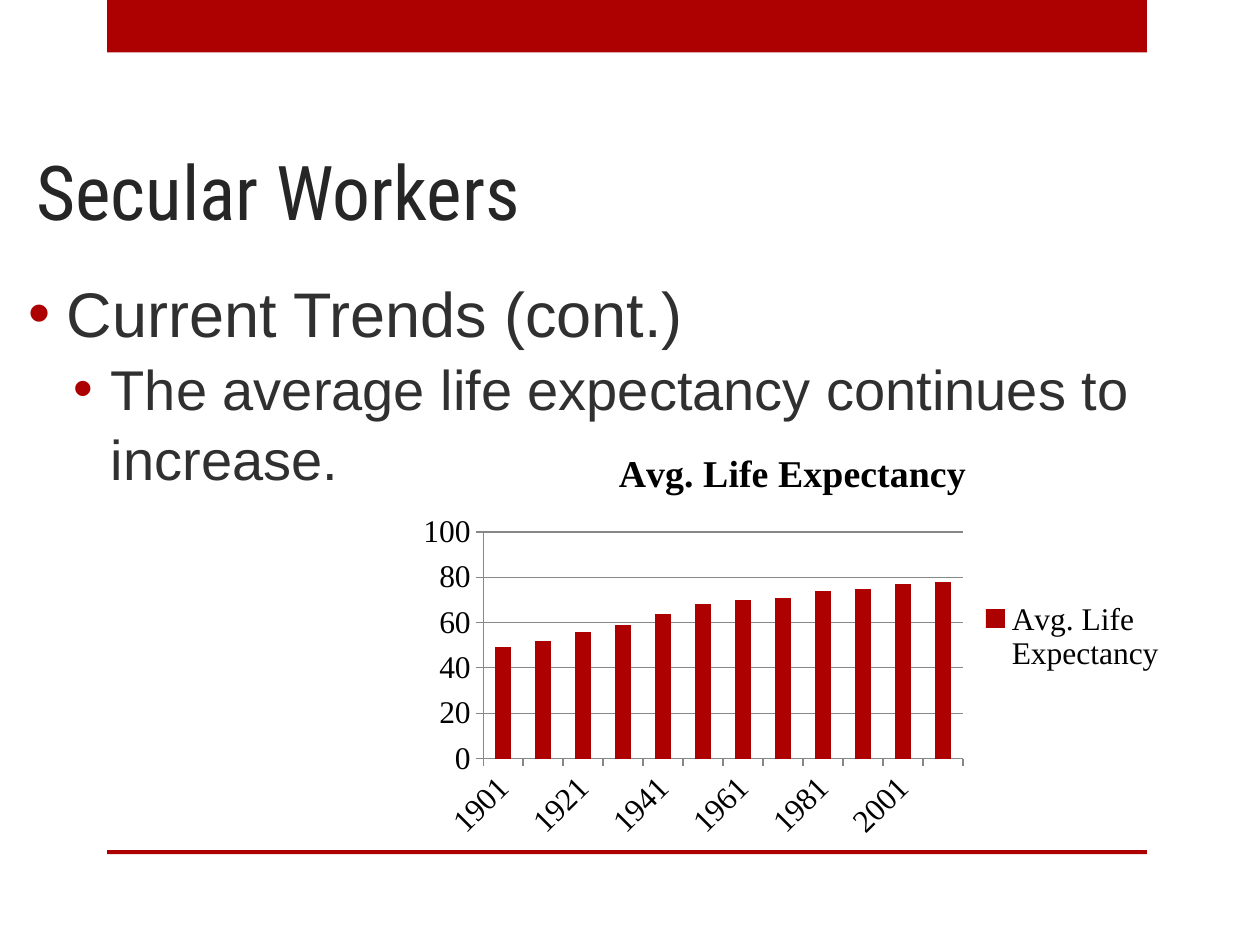
from lxml import etree
from pptx import Presentation
from pptx.chart.data import CategoryChartData
from pptx.dml.color import RGBColor
from pptx.enum.chart import XL_CHART_TYPE as ChartType, XL_LEGEND_POSITION as LegendPosition
from pptx.enum.chart import XL_TICK_MARK as TickMark
from pptx.enum.shapes import MSO_SHAPE as ShapeKind
from pptx.enum.text import MSO_ANCHOR as Anchor, MSO_AUTO_SIZE as AutoSize, PP_ALIGN as Align
from pptx.oxml.ns import qn
from pptx.util import Cm, Pt

COLORS = {
    "accent": "AD0101",
    "title": "262626",
    "body": "303030",
    "chart": "000000",
    "axis": "878787",
}
LIFE_EXPECTANCY = [49, 52, 56, 59, 64, 68, 70, 71, 74, 75, 77, 78]
YEARS = [str(1901 + 10 * index) for index in range(len(LIFE_EXPECTANCY))]
SERIES_NAME = "Avg. Life Expectancy"
PLOT_LAYOUT = {"x": 0.1, "y": 0.25, "w": 0.62, "h": 0.54}


def color(name):
    return RGBColor.from_string(COLORS[name])


def place(shape, left, top, width, height):
    shape.left, shape.top = Cm(left), Cm(top)
    shape.width, shape.height = Cm(width), Cm(height)


def format_font(font, name, size, color_name, bold=False):
    font.name = name
    font.size = Pt(size)
    font.bold = bold
    font.color.rgb = color(color_name)


def write_text(paragraph, text, *, font, size, color_name, align=Align.LEFT, bold=False):
    paragraph.alignment = align
    run = paragraph.add_run()
    run.text = text
    format_font(run.font, font, size, color_name, bold)


def add_bullet(paragraph, left, hanging):
    properties = paragraph._p.get_or_add_pPr()
    properties.set("marL", str(Cm(left)))
    properties.set("indent", str(-Cm(hanging)))
    bullet_color = etree.SubElement(properties, qn("a:buClr"))
    etree.SubElement(bullet_color, qn("a:srgbClr"), val=COLORS["accent"])
    etree.SubElement(properties, qn("a:buFont"), typeface="Arial")
    etree.SubElement(properties, qn("a:buChar"), char="•")


def add_band(slide, top, height):
    band = slide.shapes.add_shape(ShapeKind.RECTANGLE, Cm(2.16), Cm(top), Cm(20.96), Cm(height))
    band.shadow.inherit = False
    band.fill.solid()
    band.fill.fore_color.rgb = color("accent")
    band.line.fill.background()


def fill_title(title, text):
    place(title, 0.48, 2.64, 22.63, 2.24)
    frame = title.text_frame
    frame.auto_size = AutoSize.NONE
    frame.vertical_anchor = Anchor.BOTTOM
    write_text(frame.paragraphs[0], text, font="Roboto Condensed", size=43.2, color_name="title")


def fill_body(body, items):
    place(body, 0.33, 5.28, 23.57, 11.86)
    frame = body.text_frame
    frame.auto_size = AutoSize.NONE
    frame.margin_top = Cm(0.2)
    for level, (text, size, left) in enumerate(items):
        paragraph = frame.add_paragraph() if level else frame.paragraphs[0]
        paragraph.level = level
        paragraph.line_spacing = 1.04
        paragraph.space_before = Pt(level)
        add_bullet(paragraph, left, 0.76)
        write_text(paragraph, text, font="Arial", size=size, color_name="body")


def set_plot_layout(chart):
    plot_area = chart._chartSpace.chart.plotArea
    for old_layout in plot_area.findall(qn("c:layout")):
        plot_area.remove(old_layout)
    layout = etree.Element(qn("c:layout"))
    manual = etree.SubElement(layout, qn("c:manualLayout"))
    etree.SubElement(manual, qn("c:layoutTarget"), val="inner")
    for side in "xy":
        etree.SubElement(manual, qn(f"c:{side}Mode"), val="edge")
    for key, value in PLOT_LAYOUT.items():
        etree.SubElement(manual, qn(f"c:{key}"), val=str(value))
    plot_area.insert(0, layout)


def format_axes(chart):
    years, values = chart.category_axis, chart.value_axis
    values.minimum_scale, values.maximum_scale, values.major_unit = 0, 100, 20
    values.has_major_gridlines = True
    for line in (years.format.line, values.format.line, values.major_gridlines.format.line):
        line.color.rgb = color("axis")
        line.width = Pt(0.75)
    for axis in (years, values):
        axis.major_tick_mark = TickMark.OUTSIDE
        format_font(axis.tick_labels.font, "Times New Roman", 18, "chart")
    years._element.find(qn("c:txPr")).find(qn("a:bodyPr")).set("rot", "-2700000")
    label_skip = etree.Element(qn("c:tickLblSkip"), val="2")
    years._element.find(qn("c:noMultiLvlLbl")).addprevious(label_skip)


def add_life_chart(slide):
    data = CategoryChartData()
    data.categories = YEARS
    data.add_series(SERIES_NAME, LIFE_EXPECTANCY)
    chart = slide.shapes.add_chart(
        ChartType.COLUMN_STACKED, Cm(8.18), Cm(8.61), Cm(15.6), Cm(8.46), data
    ).chart
    format_font(chart.font, "Times New Roman", 18, "chart")
    chart.has_title = True
    write_text(chart.chart_title.text_frame.paragraphs[0], SERIES_NAME, font="Times New Roman",
               size=21.6, color_name="chart", align=Align.CENTER, bold=True)
    chart.chart_title.include_in_layout = False
    chart.has_legend = True
    chart.legend.position = LegendPosition.RIGHT
    chart.legend.include_in_layout = False
    format_font(chart.legend.font, "Times New Roman", 18, "chart")
    plot = chart.plots[0]
    plot.vary_by_categories = False
    plot.gap_width, plot.overlap = 150, 100
    fill = plot.series[0].format.fill
    fill.solid()
    fill.fore_color.rgb = color("accent")
    format_axes(chart)
    set_plot_layout(chart)


def main():
    presentation = Presentation()
    presentation.slide_width, presentation.slide_height = Cm(25.4), Cm(19.05)
    slide = presentation.slides.add_slide(presentation.slide_layouts[1])
    add_band(slide, 0, 1.06)
    add_band(slide, 17.14, 0.08)
    fill_title(slide.shapes.title, "Secular Workers")
    fill_body(slide.placeholders[1], [
        ("Current Trends (cont.)", 36, 0.76),
        ("The average life expectancy continues to increase.", 32, 1.65),
    ])
    add_life_chart(slide)
    presentation.save("out.pptx")


if __name__ == "__main__":
    main()
